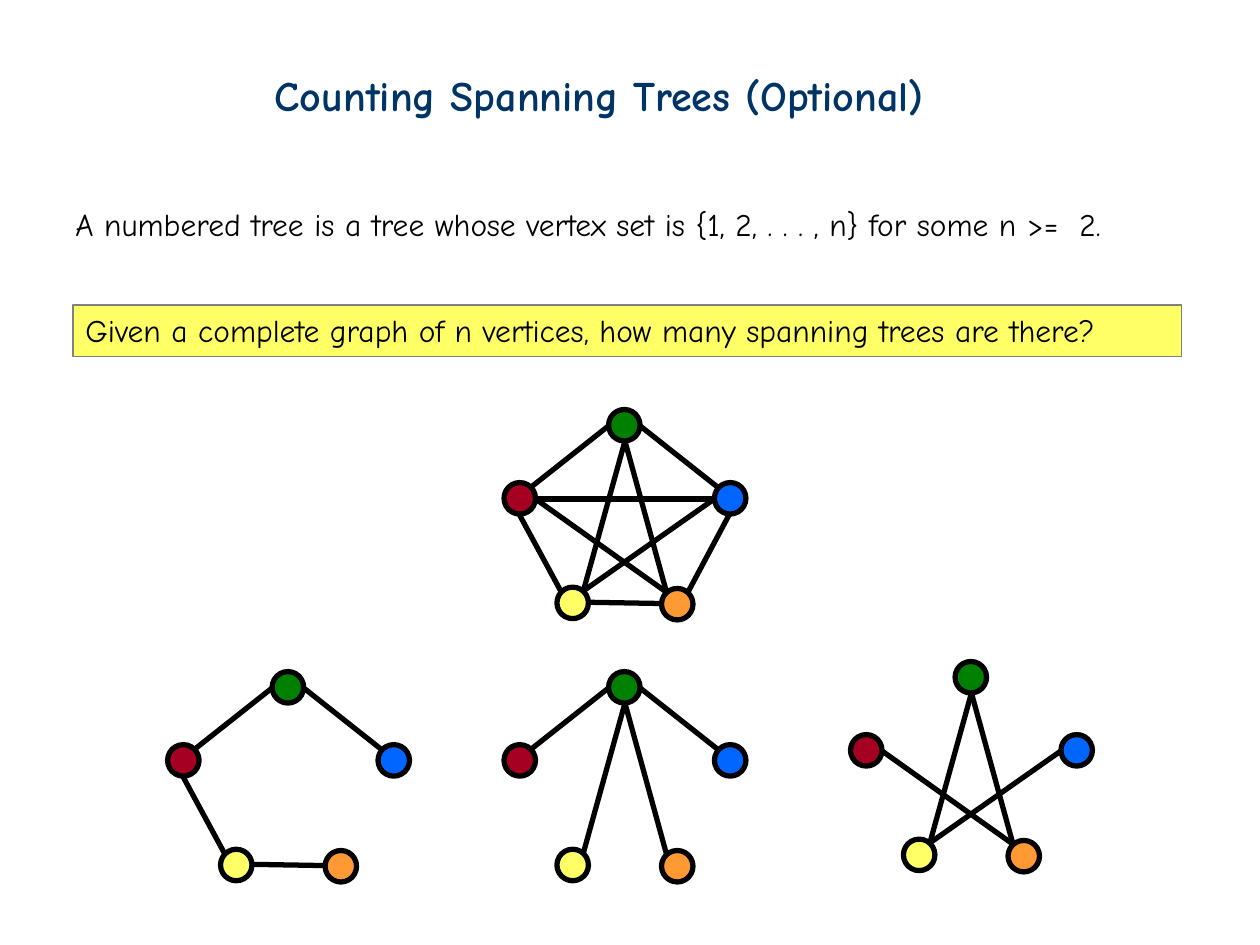
from lxml import etree
from pptx import Presentation
from pptx.dml.color import RGBColor
from pptx.enum.shapes import MSO_CONNECTOR, MSO_SHAPE
from pptx.enum.text import MSO_ANCHOR, MSO_AUTO_SIZE, PP_ALIGN
from pptx.oxml.ns import qn
from pptx.util import Inches, Pt

LINE, OVAL, RECT = MSO_CONNECTOR.STRAIGHT, MSO_SHAPE.OVAL, MSO_SHAPE.RECTANGLE
TOP, LEFT, FIXED = MSO_ANCHOR.TOP, PP_ALIGN.LEFT, MSO_AUTO_SIZE.NONE


def color(code):
    return RGBColor.from_string(code)


def write(shape, text, size, code, bold):
    frame = shape.text_frame
    frame.text = text
    for name, value in {"word_wrap": True, "auto_size": FIXED,
                        "vertical_anchor": TOP}.items():
        setattr(frame, name, value)
    para = frame.paragraphs[0]
    para.alignment = LEFT
    font = para.runs[0].font
    for name, value in {"name": "Comic Neue", "size": Pt(size), "bold": bold}.items():
        setattr(font, name, value)
    font.color.rgb = color(code)


deck = Presentation()
deck.slide_width, deck.slide_height = Inches(10), Inches(7.5)
slide = deck.slides.add_slide(deck.slide_layouts[5])
shapes = slide.shapes

# Title
title = shapes.title
for name, value in {"left": 2.08, "top": 0.5, "width": 5.85, "height": 0.5}.items():
    setattr(title, name, Inches(value))
write(title, "Counting Spanning Trees (Optional)", 24, "003366", True)

# Definition
note = shapes.add_textbox(Inches(0.5), Inches(1.58), Inches(9.08), Inches(0.4))
write(note, "A numbered tree is a tree whose vertex set is {1, 2, . . . , n} for some n >=  2.",
      18, "000000", False)

# Question
box = shapes.add_shape(RECT, Inches(0.58), Inches(2.42), Inches(8.8), Inches(0.41))
box.shadow.inherit = False
box.fill.solid()
box.fill.fore_color.rgb = color("FFFF66")
box.line.color.rgb = color("808080")
box.line.width = Pt(0.75)
write(box, "Given a complete graph of n vertices, how many spanning trees are there?",
      18, "000000", False)

# Vertices and edges, measured from the top left corner of a graph
nodes = [  # left, top, fill
    (0.42, 1.41, "FFFF66"),
    (0, 0.58, "A50021"),
    (1.67, 0.58, "0066FF"),
    (0.83, 0, "008000"),
    (1.25, 1.42, "FF9933"),
]
edges = {  # Green, Red, Blue, Yellow, Orange
    "YO": (0.67, 1.53, 1.25, 1.54),
    "GB": (1.08, 0.13, 1.7, 0.62),
    "BO": (1.79, 0.83, 1.46, 1.45),
    "GR": (0.83, 0.13, 0.21, 0.62),
    "RY": (0.12, 0.83, 0.45, 1.44),
    "GO": (0.96, 0.25, 1.29, 1.45),
    "GY": (0.96, 0.25, 0.63, 1.44),
    "RB": (0.25, 0.71, 1.67, 0.71),
    "OR": (1.29, 1.45, 0.25, 0.71),
    "YB": (0.63, 1.44, 1.67, 0.71),
}
graphs = [  # left, top, edges, grouped
    (4, 3.25, list(edges), False),
    (1.33, 5.33, ["YO", "GB", "GR", "RY"], False),
    (4, 5.33, ["GB", "GR", "GO", "GY"], True),
    (6.75, 5.25, ["GO", "GY", "OR", "YB"], False),
]

# Complete graph and three of its spanning trees
for left, top, links, grouped in graphs:
    home = shapes.add_group_shape().shapes if grouped else shapes
    for x, y, code in nodes:
        node = home.add_shape(OVAL, Inches(left + x), Inches(top + y),
                              Inches(0.25), Inches(0.25))
        node.shadow.inherit = False
        node.fill.solid()
        node.fill.fore_color.rgb = color(code)
        node.line.color.rgb = color("000000")
        node.line.width = Pt(3)
    for link in links:
        x1, y1, x2, y2 = edges[link]
        edge = home.add_connector(LINE, Inches(left + x1), Inches(top + y1),
                                  Inches(left + x2), Inches(top + y2))
        edge.line.color.rgb = color("000000")
        edge.line.width = Pt(3)
        etree.SubElement(edge._element.spPr, qn("a:effectLst"))

deck.save("out.pptx")
